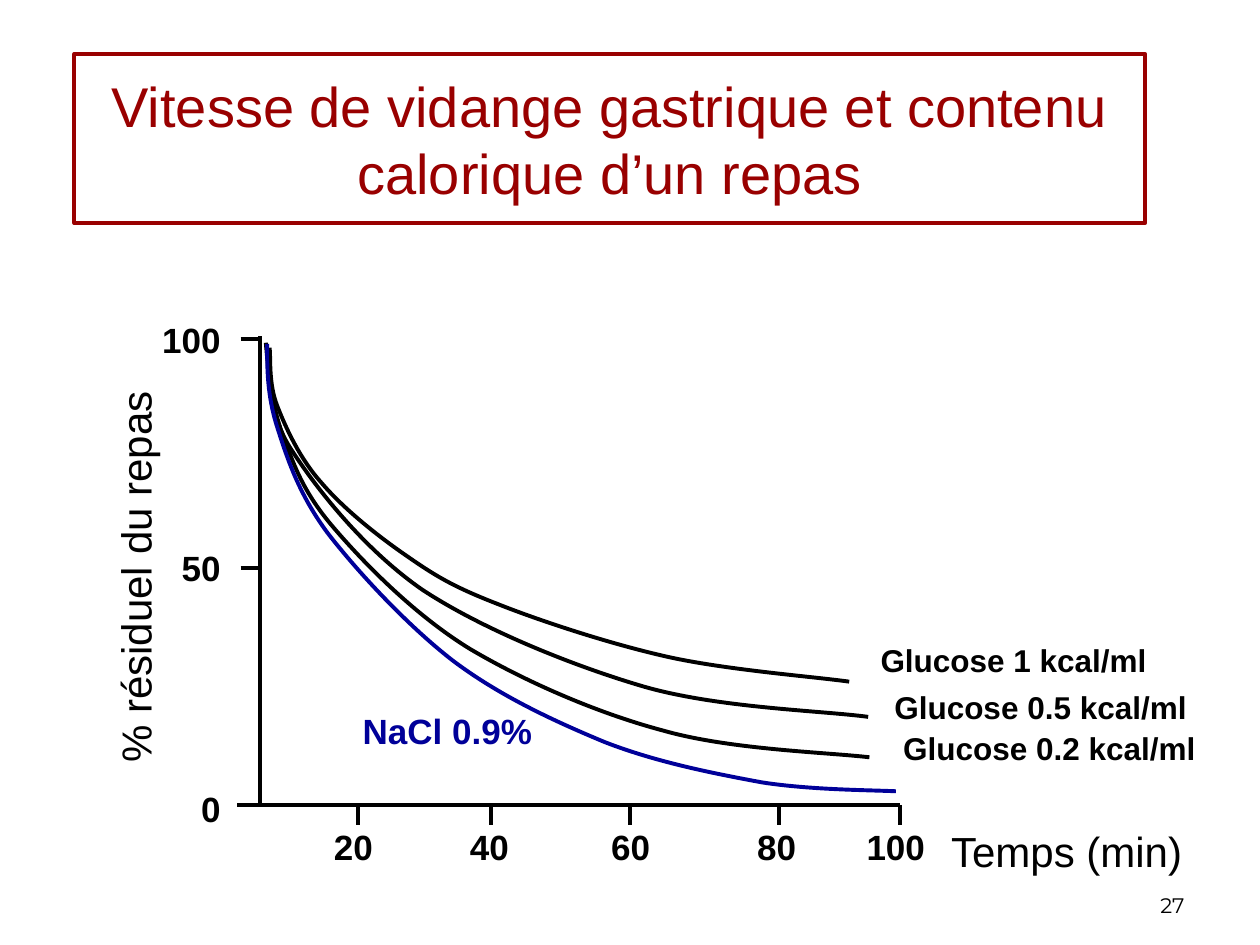
import dataclasses
import lxml.etree
import pptx
import pptx.dml.color
import pptx.enum.shapes
import pptx.enum.text
import pptx.oxml.ns
import pptx.util

ALIGN = pptx.enum.text.PP_ALIGN
ANCHOR = pptx.enum.text.MSO_ANCHOR


@dataclasses.dataclass(frozen=True)
class Theme:
    ink: str = "000000"
    title: str = "990000"
    saline: str = "000099"
    font: str = "Arial"
    number_font: str = "Montserrat"
    title_size: int = 32
    axis_size: int = 24
    tick_size: int = 20
    curve_size: int = 18
    number_size: int = 12
    stroke: float = 2.25


THEME = Theme()
WIDTH, HEIGHT = pptx.util.Inches(10), pptx.util.Inches(7.5)
COLUMN, ROW = WIDTH / 100, HEIGHT / 75

ORIGIN_X, ORIGIN_Y = 20.6, 63.9
TICK_LABEL_COLUMNS = 8
RESIDUE_TICKS = [("100", 26.9, 24.8), ("50", 45.1, 42.9), ("0", None, 62)]
TIME_TICKS = [("20", 28.4, 28.05), ("40", 39, 38.85), ("60", 50, 50.05),
              ("80", 61.8, 61.65), ("100", 71.4, 71.1)]

CURVES = [
    (THEME.ink, [
        (21.4, 27.6), (21.5, 28.4), (21.3, 30.4), (22, 32.2),
        (22.7, 34), (23.8, 36.4), (25.5, 38.3),
        (27.2, 40.3), (29.8, 42.4), (32.1, 44),
        (34.4, 45.6), (35.8, 46.5), (39.4, 47.9),
        (42.9, 49.3), (48.7, 51.2), (53.3, 52.2),
        (58, 53.2), (64.5, 53.7), (67.4, 54.1)]),
    (THEME.ink, [
        (21.1, 27.3), (21.5, 28.7), (21, 32.3), (23, 35.5),
        (25.1, 38.8), (28.9, 43.6), (33.5, 46.8),
        (38.2, 49.9), (45.3, 52.8), (51.1, 54.5),
        (57, 56.2), (65.2, 56.4), (68.9, 56.9)]),
    (THEME.ink, [
        (21.1, 27.2), (21.3, 29.5), (21.5, 31.9), (22.4, 34.4),
        (23.3, 36.8), (24, 39), (26.5, 41.9),
        (28.9, 44.7), (32.9, 48.8), (37.3, 51.5),
        (41.7, 54.1), (47.4, 56.6), (52.7, 58),
        (58, 59.5), (65.6, 59.7), (69, 60.1)]),
    (THEME.saline, [
        (21.2, 27.3), (21.2, 29.3), (21.2, 31.4), (22, 33.9),
        (22.8, 36.4), (23.7, 39.2), (26, 42.3),
        (28.4, 45.4), (32.3, 49.6), (35.9, 52.4),
        (39.6, 55.2), (43.9, 57.2), (48, 58.9),
        (52.1, 60.5), (56.7, 61.4), (60.5, 62.1),
        (64.4, 62.7), (68.9, 62.7), (71.1, 62.8)]),
]
CURVE_LABELS = [
    ("NaCl 0.9%", 27.8, 55.8, 17, THEME.tick_size, THEME.saline),
    ("Glucose 1 kcal/ml", 68.9, 50.4, 25, THEME.curve_size, THEME.ink),
    ("Glucose 0.5 kcal/ml", 70, 54.1, 27, THEME.curve_size, THEME.ink),
    ("Glucose 0.2 kcal/ml", 70.7, 57.4, 27, THEME.curve_size, THEME.ink),
]


def at(column, row):
    return round(column * COLUMN), round(row * ROW)


def color(code):
    return pptx.dml.color.RGBColor.from_string(code)


def stroke(line, code):
    line.color.rgb = color(code)
    line.width = pptx.util.Pt(THEME.stroke)


def write(frame, words, size, code, align, bold=False, font=THEME.font):
    paragraph = frame.paragraphs[0]
    paragraph.alignment = align
    run = paragraph.add_run()
    run.text = words
    run.font.name = font
    run.font.size = pptx.util.Pt(size)
    run.font.bold = bold
    run.font.color.rgb = color(code)


def add_title(slide, words):
    banner = slide.shapes.add_shape(
        pptx.enum.shapes.MSO_SHAPE.RECTANGLE, *at(5.9, 4.3), *at(85, 13.4))
    banner.shadow.inherit = False
    banner.fill.background()
    stroke(banner.line, THEME.title)
    banner.text_frame.word_wrap = True
    banner.text_frame.vertical_anchor = ANCHOR.MIDDLE
    write(banner.text_frame, words, THEME.title_size, THEME.title, ALIGN.CENTER)


def add_label(slide, words, column, row, columns, rows, size, code=THEME.ink,
              align=ALIGN.LEFT, bold=False, wrap=False, font=THEME.font):
    label = slide.shapes.add_textbox(*at(column, row), *at(columns, rows))
    label.text_frame.word_wrap = wrap
    write(label.text_frame, words, size, code, align, bold, font)
    return label


def add_line(slide, start, end):
    line = slide.shapes.add_connector(
        pptx.enum.shapes.MSO_CONNECTOR.STRAIGHT, *at(*start), *at(*end))
    stroke(line.line, THEME.ink)
    lxml.etree.SubElement(line._element.spPr, pptx.oxml.ns.qn("a:effectLst"))


def add_curve(slide, code, points):
    start, *controls = [at(*point) for point in points]
    builder = slide.shapes.build_freeform(*start)
    builder.add_line_segments(controls, close=False)
    curve = builder.convert_to_shape()
    curve.shadow.inherit = False
    curve.fill.background()
    stroke(curve.line, code)
    steps = curve._element.xpath(".//a:lnTo")
    outline = steps[0].getparent()
    for first in range(0, len(steps), 3):
        bend = lxml.etree.SubElement(outline, pptx.oxml.ns.qn("a:cubicBezTo"))
        for step in steps[first:first + 3]:
            bend.append(step[0])
            outline.remove(step)


def add_tick_label(slide, value, column, row, align):
    add_label(slide, value, column, row, TICK_LABEL_COLUMNS, 4.3,
              THEME.tick_size, align=align, bold=True)


def add_residue_axis(slide):
    add_line(slide, (ORIGIN_X, 64), (ORIGIN_X, 26.7))
    for value, tick, top in RESIDUE_TICKS:
        if tick is not None:
            add_line(slide, (19.1, tick), (ORIGIN_X, tick))
        add_tick_label(slide, value, 18.5 - TICK_LABEL_COLUMNS, top, ALIGN.RIGHT)
    name = add_label(slide, "% résiduel du repas", -8.2, 43.3, 37.8, 5,
                     THEME.axis_size, align=ALIGN.CENTER, wrap=True)
    name.rotation = 270


def add_time_axis(slide):
    add_line(slide, (71.4, ORIGIN_Y), (18.8, ORIGIN_Y))
    for value, tick, center in TIME_TICKS:
        add_line(slide, (tick, ORIGIN_Y), (tick, 65.5))
        add_tick_label(slide, value, center - TICK_LABEL_COLUMNS / 2, 65,
                       ALIGN.CENTER)
    add_label(slide, "Temps (min)", 74.5, 65, 22, 5, THEME.axis_size)


def main():
    deck = pptx.Presentation()
    deck.slide_width, deck.slide_height = WIDTH, HEIGHT
    slide = deck.slides.add_slide(deck.slide_layouts[6])
    add_title(slide, "Vitesse de vidange gastrique et contenu calorique d’un repas")
    add_residue_axis(slide)
    add_time_axis(slide)
    for code, points in CURVES:
        add_curve(slide, code, points)
    for words, column, row, columns, size, code in CURVE_LABELS:
        add_label(slide, words, column, row, columns, 4, size, code, bold=True)
    number = add_label(slide, "27", 71.7, 68.3, 23.3, 5, THEME.number_size,
                       align=ALIGN.RIGHT, wrap=True, font=THEME.number_font)
    number.text_frame.vertical_anchor = ANCHOR.BOTTOM
    deck.save("out.pptx")


if __name__ == "__main__":
    main()
